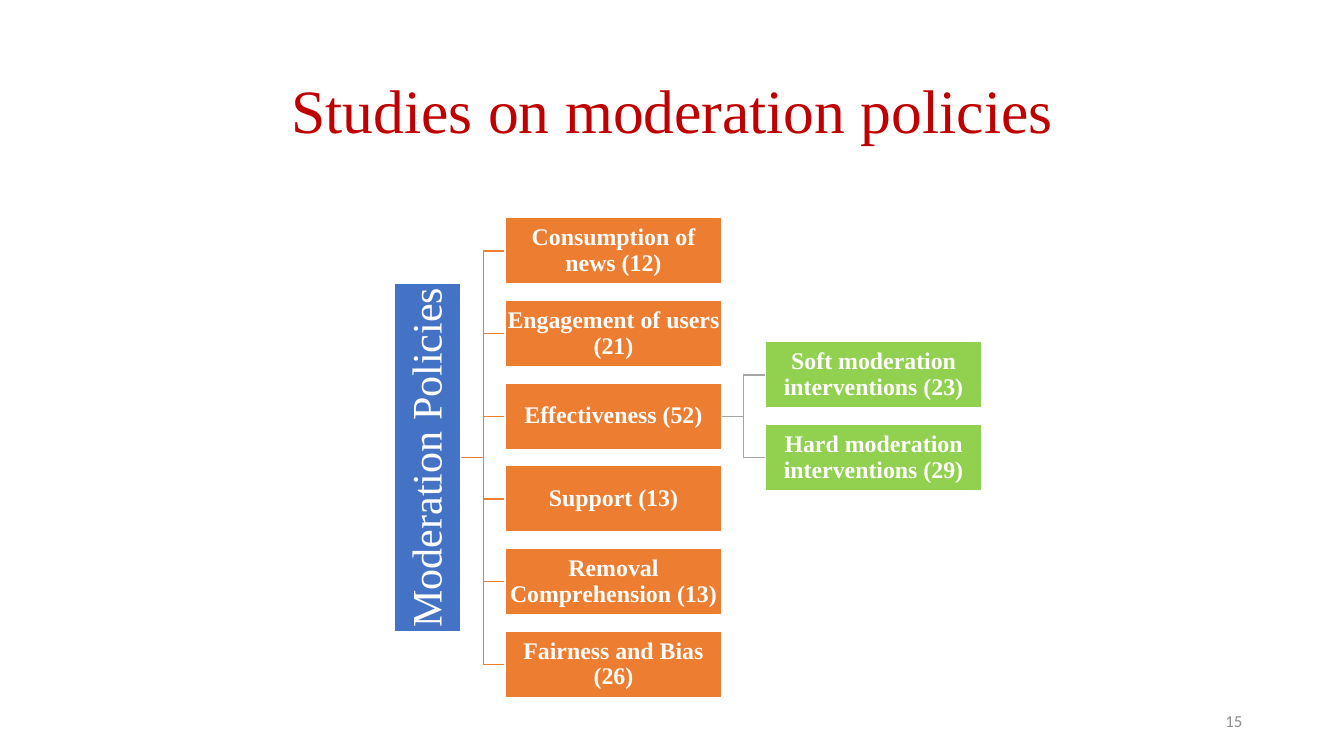
from dataclasses import dataclass

from lxml import etree
from pptx import Presentation
from pptx.dml.color import RGBColor
from pptx.enum.shapes import MSO_CONNECTOR, MSO_SHAPE
from pptx.enum.text import MSO_ANCHOR, PP_ALIGN
from pptx.oxml.ns import qn
from pptx.util import Inches, Pt

RECT = MSO_SHAPE.RECTANGLE
ELBOW = MSO_CONNECTOR.ELBOW
MIDDLE = MSO_ANCHOR.MIDDLE
CENTER, RIGHT = PP_ALIGN.CENTER, PP_ALIGN.RIGHT


@dataclass(frozen=True)
class Theme:
    serif: str = "Times New Roman"
    sans: str = "Calibri"
    title: str = "C00000"
    root: str = "4472C4"
    branch: str = "ED7D31"
    leaf: str = "92D050"
    leaf_line: str = "A5A5A5"
    white: str = "FFFFFF"
    muted: str = "8C8C8C"
    title_size: int = 44
    root_size: int = 30
    node_size: int = 17
    number_size: int = 12


THEME = Theme()

# Tree geometry in inches
NODE_W, NODE_H, PITCH = 2.15, 0.66, 0.82
ROOT_X, ROOT_LENGTH = 4.245, 3.45
BRANCH_X, LEAF_X = 5.01, 7.59
TREE_MIDDLE = 4.54

BRANCHES = [
    "Consumption of news (12)",
    "Engagement of users (21)",
    "Effectiveness (52)",
    "Support (13)",
    "Removal Comprehension (13)",
    "Fairness and Bias (26)",
]
PARENT = 2  # the branch that splits into leaves
LEAVES = ["Soft moderation interventions (23)", "Hard moderation interventions (29)"]


def write(sp, text, size, color, font, align=CENTER, bold=False, spacing=0.9):
    tf = sp.text_frame
    tf.word_wrap = True
    tf.vertical_anchor = MIDDLE
    p = tf.paragraphs[0]
    p.text = text
    p.alignment = align
    p.line_spacing = spacing
    p.font.size = Pt(size)
    p.font.name = font
    p.font.bold = bold
    p.font.color.rgb = RGBColor.from_string(color)


def add_text(s, left, top, width, height, text, size, color, font, **style):
    sp = s.shapes.add_textbox(Inches(left), Inches(top), Inches(width), Inches(height))
    write(sp, text, size, color, font, **style)


def add_node(s, center_x, center_y, text, fill, width=NODE_W, size=THEME.node_size,
             bold=True, inset=0.01, rotation=0):
    sp = s.shapes.add_shape(RECT, Inches(center_x - width / 2), Inches(center_y - NODE_H / 2),
                            Inches(width), Inches(NODE_H))
    sp.shadow.inherit = False
    sp.rotation = rotation
    sp.fill.solid()
    sp.fill.fore_color.rgb = RGBColor.from_string(fill)
    sp.line.color.rgb = RGBColor.from_string(THEME.white)
    sp.line.width = Pt(1)
    tf = sp.text_frame
    tf.margin_left = tf.margin_right = tf.margin_top = tf.margin_bottom = Inches(inset)
    write(sp, text, size, THEME.white, THEME.serif, bold=bold)


def add_elbow(s, x1, y1, x2, y2, color):
    cxn = s.shapes.add_connector(ELBOW, Inches(x1), Inches(y1), Inches(x2), Inches(y2))
    cxn.line.color.rgb = RGBColor.from_string(color)
    cxn.line.width = Pt(1)
    etree.SubElement(cxn._element.spPr, qn("a:effectLst"))


def add_children(s, labels, left, middle, parent_right, parent_y, fill, line):
    """Stack nodes evenly around middle, join them to the parent, return their centres."""
    first = middle - PITCH * (len(labels) - 1) / 2
    centers = [first + PITCH * i for i in range(len(labels))]
    for y in centers:
        add_elbow(s, parent_right, parent_y, left, y, line)
    for label, y in zip(labels, centers):
        add_node(s, left + NODE_W / 2, y, label, fill)
    return centers


def main():
    prs = Presentation()
    prs.slide_width, prs.slide_height = Inches(13.33), Inches(7.5)
    s = prs.slides.add_slide(prs.slide_layouts[6])

    # Title and slide number
    add_text(s, 0.92, 0.4, 11.5, 1.45, "Studies on moderation policies",
             THEME.title_size, THEME.title, THEME.serif)
    add_text(s, 9.42, 6.95, 3, 0.4, "15", THEME.number_size, THEME.muted, THEME.sans,
             align=RIGHT, spacing=1.0)

    # Root, turned to read upwards
    add_node(s, ROOT_X, TREE_MIDDLE, "Moderation Policies", THEME.root, width=ROOT_LENGTH,
             size=THEME.root_size, bold=False, inset=0.02, rotation=270)

    # Branches, then the leaves of one branch
    centers = add_children(s, BRANCHES, BRANCH_X, TREE_MIDDLE, ROOT_X + NODE_H / 2,
                           TREE_MIDDLE, THEME.branch, THEME.branch)
    parent_y = centers[PARENT]
    add_children(s, LEAVES, LEAF_X, parent_y, BRANCH_X + NODE_W, parent_y,
                 THEME.leaf, THEME.leaf_line)

    prs.save("out.pptx")


if __name__ == "__main__":
    main()
